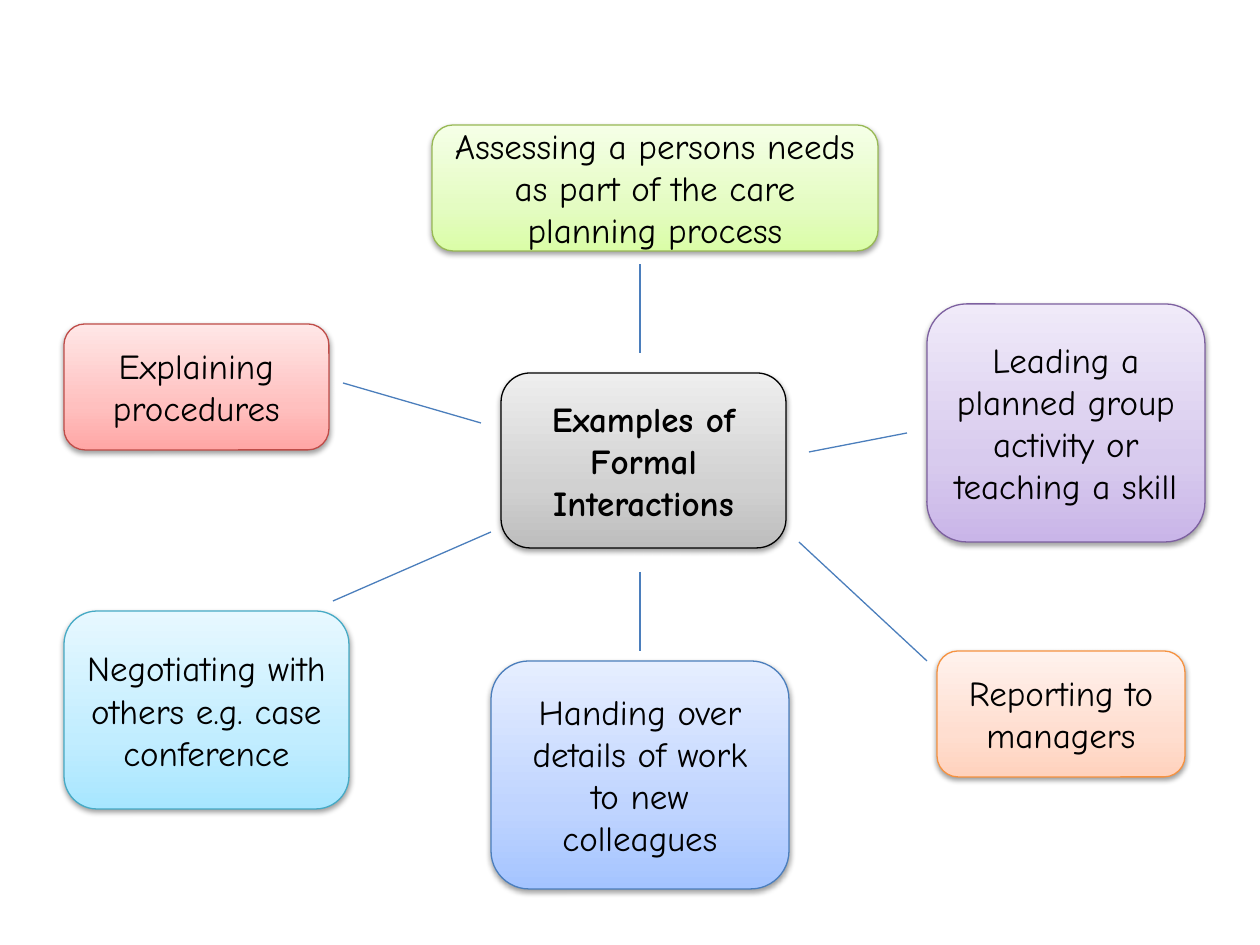
"""Builds a mind map of examples of formal interactions."""
import copy

import pptx
import pptx.dml.color
import pptx.enum.shapes
import pptx.enum.text
import pptx.oxml
import pptx.oxml.ns
import pptx.oxml.xmlchemy
import pptx.util

EMU_PER_PX = 914400 / 126
FONT = "Comic Neue"
COLORS = {
    "red": ("BF4C48", "FFA6A5", "FFC0BF", "FFE7E7"),
    "green": ("98B955", "DAFDA7", "E4FCC2", "F5FFE7"),
    "purple": ("7D60A0", "C9B5E8", "D8CBEE", "F0EAF9"),
    "blue": ("4B7EBC", "A4C4FF", "BFD4FF", "E6EEFF"),
    "cyan": ("46AAC5", "A7E6FF", "C1EDFF", "E7F8FF"),
    "orange": ("F69240", "FFD2BD", "FFDED0", "FFF2ED"),
    "grey": ("000000", "BDBDBD", "D1D1D1", "EEEEEE"),
    "text": "000000",
    "spoke": "4B7EBC",
}
STOPS = (0, 0.35, 1)
HUB = "Examples of Formal Interactions"
BUBBLES = [
    ("Explaining procedures", "red", (64, 324, 265, 126)),
    ("Assessing a persons needs as part of the care planning process", "green",
     (432, 125, 446, 126)),
    ("Leading a planned group activity or teaching a skill", "purple",
     (927, 304, 278, 238)),
    ("Handing over details of work to new colleagues", "blue",
     (491, 661, 298, 228)),
    ("Negotiating with others e.g. case conference", "cyan",
     (64, 611, 285, 198)),
    ("Reporting to managers", "orange", (937, 651, 248, 126)),
    (HUB, "grey", (501, 373, 285, 175)),
]
SPOKES = [
    (640, 353, 640, 264),
    (809, 452, 907, 433),
    (799, 542, 927, 661),
    (640, 572, 640, 651),
    (491, 532, 333, 601),
    (481, 423, 343, 383),
]
SHADOW = (
    f'<a:outerShdw {pptx.oxml.ns.nsdecls("a")} blurRad="40000" dist="20000" '
    'dir="5400000" rotWithShape="0"><a:srgbClr val="000000">'
    '<a:alpha val="38000"/></a:srgbClr></a:outerShdw>'
)


def px(*lengths):
    return [round(length * EMU_PER_PX) for length in lengths]


def rgb(color):
    return pptx.dml.color.RGBColor.from_string(color)


def set_line(line, color):
    line.color.rgb = rgb(color)
    line.width = pptx.util.Pt(0.75)


def shade(bubble, colors):
    bubble.fill.gradient()
    bubble.fill.gradient_angle = 90
    stop_list = bubble._element.spPr.xpath(".//a:gsLst")[0]
    stop_list.insert(1, copy.deepcopy(stop_list[0]))
    for stop, position, color in zip(bubble.fill.gradient_stops, STOPS, colors):
        stop.position = position
        stop.color.rgb = rgb(color)


def add_bubble(slide, label, color, box):
    bubble = slide.shapes.add_shape(
        pptx.enum.shapes.MSO_SHAPE.ROUNDED_RECTANGLE, *px(*box))
    border, *gradient = COLORS[color]
    shade(bubble, gradient)
    set_line(bubble.line, border)
    bubble.shadow.inherit = False
    effects = bubble._element.spPr.find(pptx.oxml.ns.qn("a:effectLst"))
    effects.append(pptx.oxml.parse_xml(SHADOW))
    frame = bubble.text_frame
    frame.word_wrap = True
    frame.vertical_anchor = pptx.enum.text.MSO_ANCHOR.MIDDLE
    frame.text = label
    paragraph = frame.paragraphs[0]
    paragraph.alignment = pptx.enum.text.PP_ALIGN.CENTER
    font = paragraph.runs[0].font
    font.name = FONT
    font.size = pptx.util.Pt(20)
    font.bold = label == HUB
    font.color.rgb = rgb(COLORS["text"])


def add_spoke(slide, ends):
    spoke = slide.shapes.add_connector(
        pptx.enum.shapes.MSO_CONNECTOR.STRAIGHT, *px(*ends))
    set_line(spoke.line, COLORS["spoke"])
    spoke._element.spPr.append(pptx.oxml.xmlchemy.OxmlElement("a:effectLst"))


def main():
    deck = pptx.Presentation()
    deck.slide_width, deck.slide_height = px(1260, 945)
    slide = deck.slides.add_slide(deck.slide_layouts.get_by_name("Blank"))
    for label, color, box in BUBBLES:
        add_bubble(slide, label, color, box)
    for ends in SPOKES:
        add_spoke(slide, ends)
    deck.save("out.pptx")


if __name__ == "__main__":
    main()
